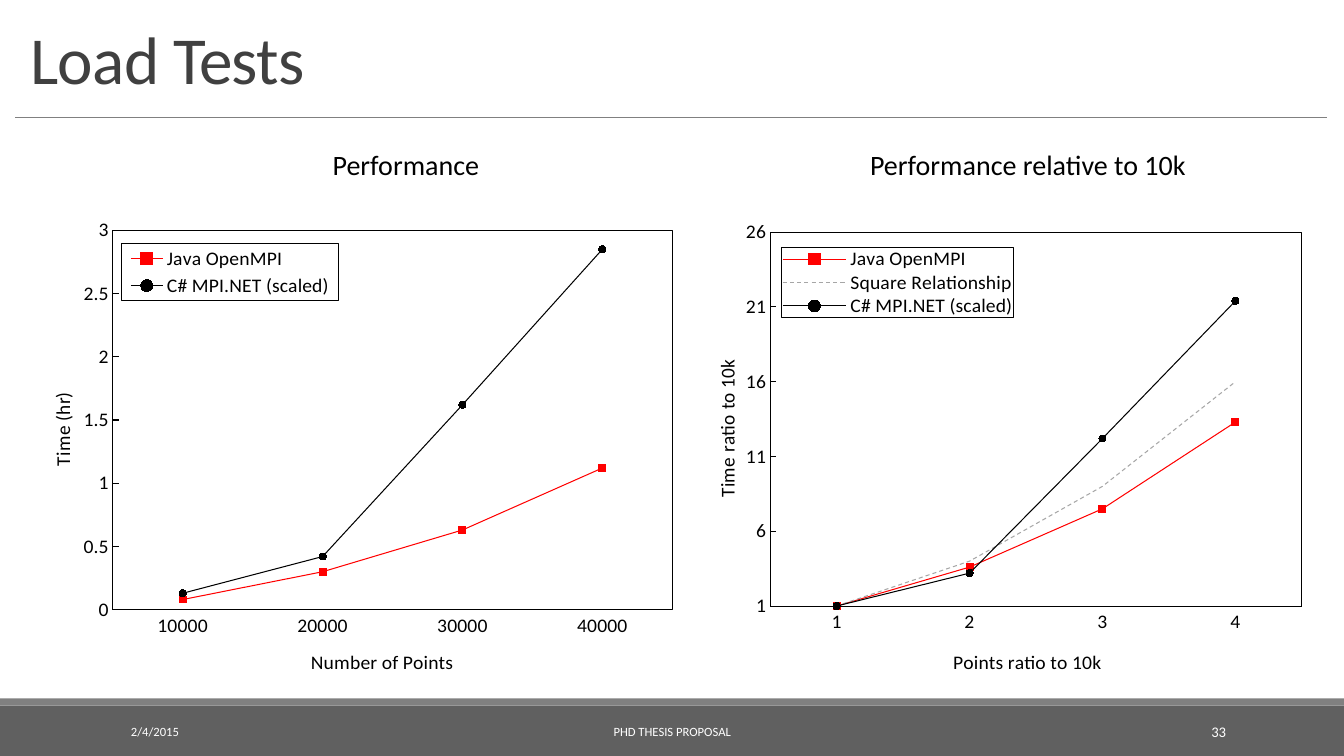
from lxml.etree import SubElement
from pptx import Presentation
from pptx.chart.data import CategoryChartData
from pptx.dml.color import RGBColor
from pptx.enum.chart import XL_CHART_TYPE, XL_LEGEND_POSITION, XL_MARKER_STYLE, XL_TICK_MARK
from pptx.enum.dml import MSO_LINE
from pptx.enum.shapes import MSO_CONNECTOR, MSO_SHAPE
from pptx.enum.text import MSO_ANCHOR, MSO_AUTO_SIZE, PP_ALIGN
from pptx.oxml import parse_xml
from pptx.oxml.ns import nsdecls, qn
from pptx.util import Cm, Pt

FONT = "Calibri"
BLACK = RGBColor(0x00, 0x00, 0x00)
WHITE = RGBColor(0xFF, 0xFF, 0xFF)
RED = RGBColor(0xFF, 0x00, 0x00)
LIGHT_GRAY = RGBColor(0xA6, 0xA6, 0xA6)
MID_GRAY = RGBColor(0x80, 0x80, 0x80)
DARK_GRAY = RGBColor(0x60, 0x60, 0x60)
TITLE_GRAY = RGBColor(0x40, 0x40, 0x40)

# Series name: color, marker style
SERIES_STYLES = {
    "Java OpenMPI": (RED, XL_MARKER_STYLE.SQUARE),
    "Square Relationship": (LIGHT_GRAY, XL_MARKER_STYLE.NONE),
    "C# MPI.NET (scaled)": (BLACK, XL_MARKER_STYLE.CIRCLE),
}

# Boxes are left, top, width, height in cm; layouts are fractions of the chart
PERFORMANCE = {
    "box": (0.48, 5.46, 16.51, 11.68),
    "categories": ["10000", "20000", "30000", "40000"],
    "series": {
        "Java OpenMPI": (0.08, 0.3, 0.63, 1.12),
        "C# MPI.NET (scaled)": (0.13, 0.42, 1.62, 2.85),
    },
    "scale": {"minimum_scale": 0, "maximum_scale": 3, "major_unit": 0.5},
    "category_title": ("Number of Points", (0.44, 0.94)),
    "value_title": ("Time (hr)", (0.04, 0.38)),
    "plot": (0.143, 0.03, 0.854, 0.833),
    "legend": (0.157, 0.058, 0.33, 0.127),
}
RELATIVE = {
    "box": (17.42, 5.46, 15.49, 11.68),
    "categories": ["1", "2", "3", "4"],
    "series": {
        "Java OpenMPI": (1, 3.6, 7.5, 13.3),
        "Square Relationship": (1, 4, 9, 16),
        "C# MPI.NET (scaled)": (1, 3.2, 12.2, 21.4),
    },
    "scale": {"minimum_scale": 1, "maximum_scale": 26, "major_unit": 5},
    "category_title": ("Points ratio to 10k", (0.42, 0.94)),
    "value_title": ("Time ratio to 10k", (0.03, 0.31)),
    "plot": (0.128, 0.034, 0.865, 0.821),
    "legend": (0.147, 0.067, 0.377, 0.153),
}


def set_all(target, values):
    for name, value in values.items():
        setattr(target, name, value)


def set_font(font, size, color):
    set_all(font, {"name": FONT, "size": Pt(size), "bold": False})
    font.color.rgb = color


def set_line(line, color, width=0.75):
    line.color.rgb = color
    line.width = Pt(width)


def add_bar(slide, top, height, color):
    bar = slide.shapes.add_shape(MSO_SHAPE.RECTANGLE, 0, Cm(top), Cm(33.86), Cm(height))
    bar.shadow.inherit = False
    bar.fill.solid()
    bar.fill.fore_color.rgb = color
    bar.line.fill.background()


def add_rule(slide, left, right, top):
    rule = slide.shapes.add_connector(
        MSO_CONNECTOR.STRAIGHT, Cm(left), Cm(top), Cm(right), Cm(top))
    set_line(rule.line, MID_GRAY, 0.5)
    SubElement(rule._element.spPr, qn("a:effectLst"))


def add_text(slide, text, box, size, color, align=PP_ALIGN.LEFT, **frame_format):
    shape = slide.shapes.add_textbox(*map(Cm, box))
    set_all(shape.text_frame, {"word_wrap": True, **frame_format})
    paragraph = shape.text_frame.paragraphs[0]
    paragraph.text = text
    paragraph.alignment = align
    set_font(paragraph.font, size, color)


def set_title(slide, text):
    title = slide.shapes.title
    set_all(title, {"left": Cm(0.51), "top": Cm(0.38), "width": Cm(32.84), "height": Cm(2.21)})
    set_all(title.text_frame, {"vertical_anchor": MSO_ANCHOR.BOTTOM,
                               "auto_size": MSO_AUTO_SIZE.NONE})
    paragraph = title.text_frame.paragraphs[0]
    set_all(paragraph, {"text": text, "alignment": PP_ALIGN.LEFT, "line_spacing": 0.85})
    run = paragraph.runs[0]
    set_font(run.font, 48, TITLE_GRAY)
    run.font._element.set("spc", "-50")


def manual_layout(values, target=None):
    keys = ("x", "y", "w", "h")[:len(values)]
    parts = f'<c:layoutTarget val="{target}"/>' if target else ""
    parts += "".join(f'<c:{key}Mode val="edge"/>' for key in keys[:2])
    parts += "".join(f'<c:{key} val="{value}"/>' for key, value in zip(keys, values))
    return parse_xml(
        f'<c:layout {nsdecls("c")}><c:manualLayout>{parts}</c:manualLayout></c:layout>')


def place(element, after, layout):
    """Replace the layout of a chart part; it follows the child named after."""
    for old in element.findall(qn("c:layout")):
        element.remove(old)
    if after:
        element.find(qn(after)).addnext(layout)
    else:
        element.insert(0, layout)


def frame_properties(outline):
    """White area with the given outline."""
    return parse_xml(
        f'<c:spPr {nsdecls("c", "a")}><a:solidFill><a:srgbClr val="{WHITE}"/></a:solidFill>'
        f'<a:ln w="9525">{outline}</a:ln></c:spPr>')


def format_axis(axis, title, tick):
    text, position = title
    set_all(axis, {"has_major_gridlines": False, "major_tick_mark": tick,
                   "minor_tick_mark": XL_TICK_MARK.NONE, "has_title": True})
    set_line(axis.format.line, BLACK)
    set_font(axis.tick_labels.font, 14, BLACK)
    paragraph = axis.axis_title.text_frame.paragraphs[0]
    paragraph.text = text
    set_font(paragraph.runs[0].font, 14, BLACK)
    place(axis.axis_title._element, "c:tx", manual_layout(position))


def format_series(series):
    color, marker = SERIES_STYLES[series.name]
    series.smooth = False
    set_line(series.format.line, color)
    set_all(series.marker, {"style": marker, "size": 5})
    if marker == XL_MARKER_STYLE.NONE:
        series.format.line.dash_style = MSO_LINE.DASH
    else:
        series.marker.format.fill.solid()
        series.marker.format.fill.fore_color.rgb = color
        set_line(series.marker.format.line, color)


def add_line_chart(slide, content):
    data = CategoryChartData()
    data.categories = content["categories"]
    for name, values in content["series"].items():
        data.add_series(name, values)
    chart = slide.shapes.add_chart(
        XL_CHART_TYPE.LINE_MARKERS, *map(Cm, content["box"]), data).chart
    chart.has_title = False
    set_font(chart.font, 14, BLACK)
    chart.plots[0].vary_by_categories = False
    for series in chart.plots[0].series:
        format_series(series)

    # Axes
    format_axis(chart.category_axis, content["category_title"], XL_TICK_MARK.NONE)
    format_axis(chart.value_axis, content["value_title"], XL_TICK_MARK.INSIDE)
    set_all(chart.value_axis, content["scale"])

    # Framed legend inside the plot
    outline = f'<a:solidFill><a:srgbClr val="{BLACK}"/></a:solidFill>'
    chart.has_legend = True
    set_all(chart.legend, {"position": XL_LEGEND_POSITION.TOP, "include_in_layout": True})
    set_font(chart.legend.font, 14, BLACK)
    legend = chart.legend._element
    place(legend, "c:legendPos", manual_layout(content["legend"]))
    legend.find(qn("c:overlay")).addnext(frame_properties(outline))

    # Framed plot area on a white chart
    plot_area = chart._chartSpace.chart.plotArea
    place(plot_area, None, manual_layout(content["plot"], "inner"))
    plot_area.append(frame_properties(outline))
    chart._chartSpace.chart.addnext(frame_properties("<a:noFill/>"))


def main():
    presentation = Presentation()
    set_all(presentation, {"slide_width": Cm(33.86), "slide_height": Cm(19.05)})
    slide = presentation.slides.add_slide(presentation.slide_layouts[5])

    # Footer bars, rule and title
    add_bar(slide, 17.78, 1.27, DARK_GRAY)
    add_bar(slide, 17.6, 0.18, MID_GRAY)
    add_rule(slide, 0.38, 33.43, 2.95)
    set_title(slide, "Load Tests")

    # Footer texts
    for text, left, width, size, align in (
            ("2/4/2015", 3.05, 6.86, 9, PP_ALIGN.LEFT),
            ("PHD THESIS PROPOSAL", 10.24, 13.39, 9, PP_ALIGN.CENTER),
            ("33", 27.51, 3.63, 10.5, PP_ALIGN.RIGHT)):
        add_text(slide, text, (left, 17.93, width, 1.02), size, WHITE, align,
                 vertical_anchor=MSO_ANCHOR.MIDDLE)

    # Charts with their headings
    for heading, left, width, content in (
            ("Performance", 8.13, 4.24, PERFORMANCE),
            ("Performance relative to 10k", 21.67, 8.56, RELATIVE)):
        add_text(slide, heading, (left, 3.58, width, 1.12), 20, BLACK, word_wrap=False)
        add_line_chart(slide, content)

    presentation.save("out.pptx")


if __name__ == "__main__":
    main()
